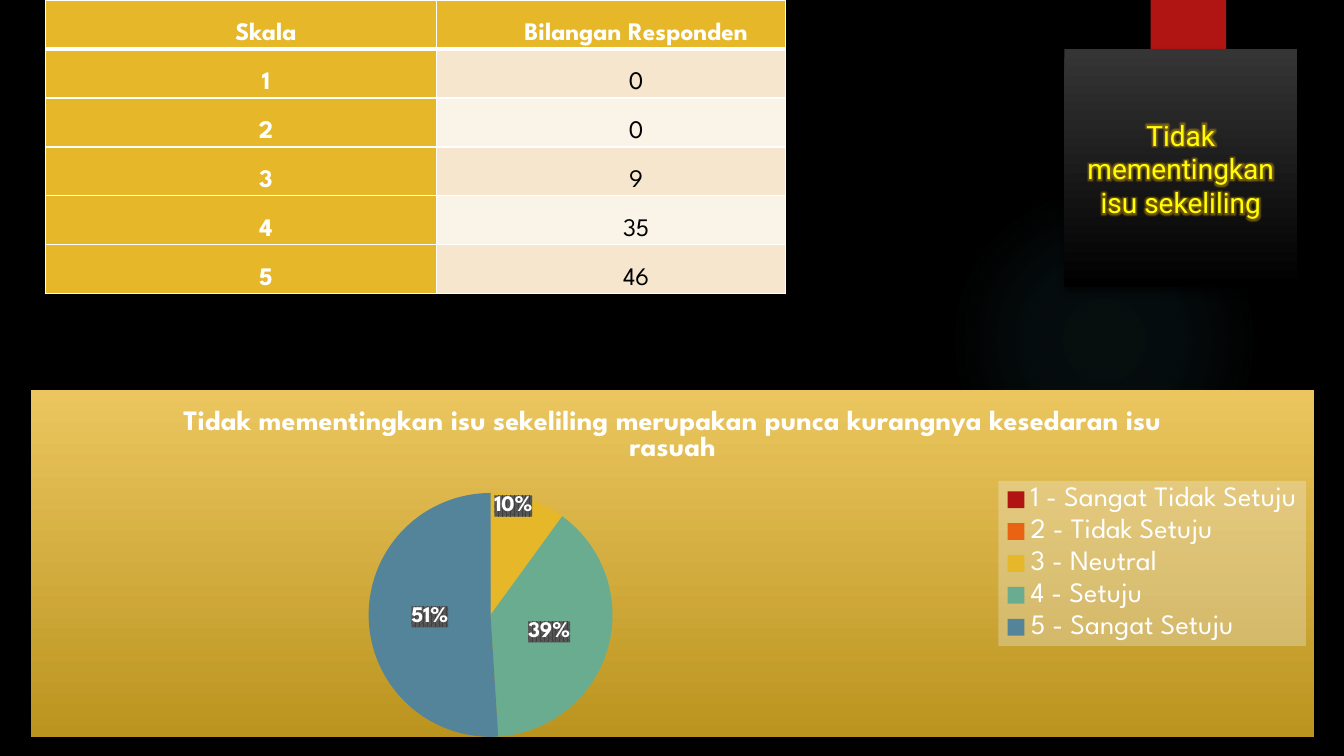
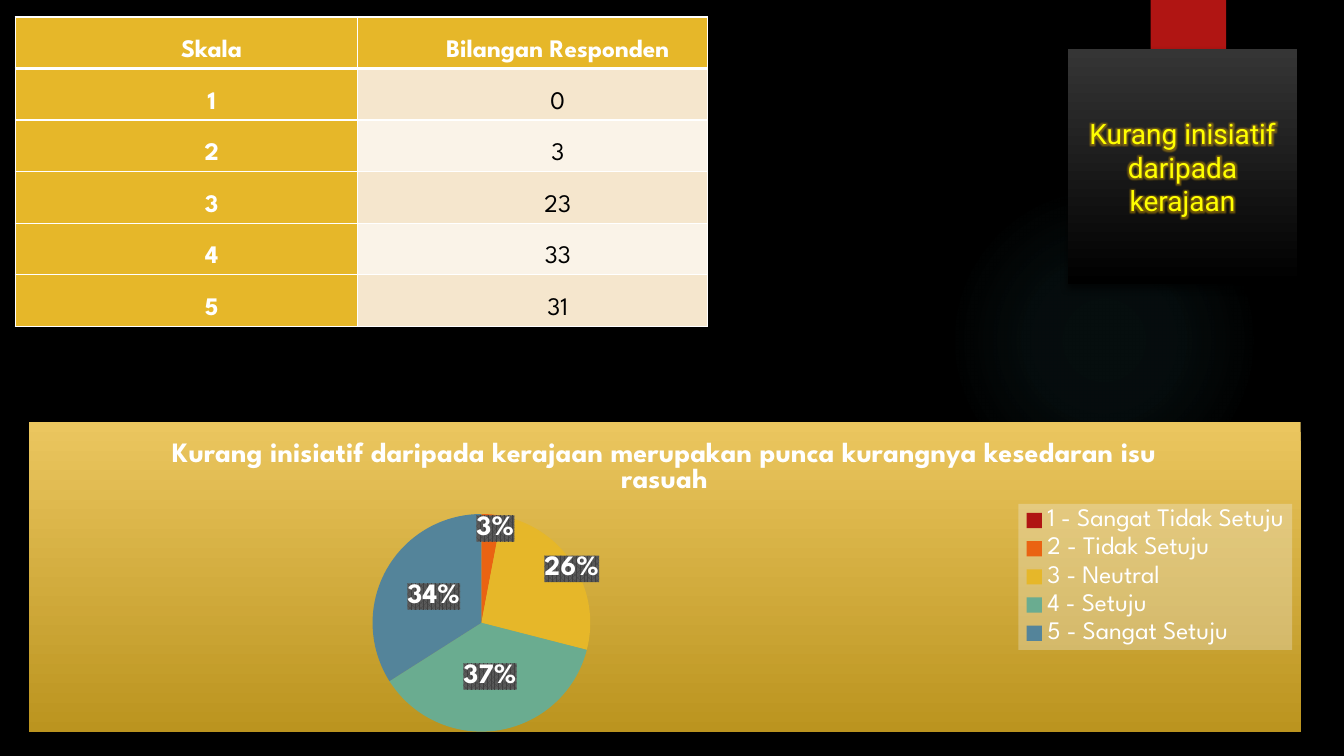
"""Build two survey slides, each with a response table, a pie chart and a heading."""
from copy import deepcopy
from dataclasses import dataclass

from pptx import Presentation
from pptx.chart.data import CategoryChartData
from pptx.dml.color import RGBColor
from pptx.enum.chart import XL_CHART_TYPE, XL_LABEL_POSITION, XL_LEGEND_POSITION
from pptx.enum.shapes import MSO_SHAPE
from pptx.enum.text import MSO_ANCHOR, MSO_AUTO_SIZE, PP_ALIGN
from pptx.oxml import parse_xml
from pptx.oxml.ns import nsdecls, qn
from pptx.util import Pt


@dataclass(frozen=True)
class Theme:
    black: str = "000000"
    white: str = "FFFFFF"
    red: str = "B01513"
    gold: str = "E6B729"
    glow: str = "50B9C1"
    heading: str = "FFFF00"
    heading_glow: str = "FFC000"
    heading_top: str = "353535"
    panel_top: str = "EBC65F"
    panel_bottom: str = "BB941F"
    legend: str = "F2F2F2"
    label_dark: str = "404040"
    label_light: str = "595959"
    bands: tuple = ("F5E6CD", "FAF3E8")
    slices: tuple = ("B01513", "EA6312", "E6B729", "6AAC90", "54849A")
    body_font: str = "League Spartan"
    heading_font: str = "Roboto"
    heading_size: int = 20
    table_size: int = 18
    chart_size: int = 10


theme = Theme()
SCALE = ("1 - Sangat Tidak Setuju", "2 - Tidak Setuju", "3 - Neutral",
         "4 - Setuju", "5 - Sangat Setuju")
DOWN = '<a:lin ang="5400000" scaled="0"/>'
RADIAL = '<a:path path="circle"><a:fillToRect l="50000" t="50000" r="50000" b="50000"/></a:path>'
SHADOW = ('<a:effectLst><a:outerShdw blurRad="{blur}" dist="{dist}" dir="5400000" rotWithShape="0">'
          '<a:srgbClr val="000000"><a:alpha val="{alpha}"/></a:srgbClr></a:outerShdw></a:effectLst>')

surveys = [
    dict(heading="Tidak mementingkan isu sekeliling",
         heading_box=(760.3, 35.3, 166.3, 170),
         table_at=(32.4, 0), columns=(279.2, 249.6), row_height=35,
         respondents=(0, 0, 9, 35, 46),
         chart_box=(22.3, 278.6, 916.5, 247.8), plot_left=0.005,
         shares=(0, 0, 10, 39, 51), label_size=16, legend_size=20,
         moved_labels={2: (0.003, -0.147)}),
    dict(heading="Kurang inisiatif daripada kerajaan",
         heading_box=(762.8, 35.3, 163.8, 167.8),
         table_at=(10.8, 12.2), columns=(244.8, 249.6), row_height=36.8,
         respondents=(0, 3, 23, 33, 31),
         chart_box=(20.4, 301.5, 908.6, 221.2), plot_left=0.003,
         shares=(0, 3, 26, 37, 34), label_size=20, legend_size=18,
         moved_labels={1: (0.007, -0.13), 2: (0.035, -0.08)}),
]


def fragment(markup):
    return parse_xml(f'<root {nsdecls("a", "c")}>{markup}</root>')[0]


def gradient(stops, direction):
    marks = "".join(
        f'<a:gs pos="{position * 1000}"><a:srgbClr val="{colour}">'
        f'<a:alpha val="{opacity * 1000}"/></a:srgbClr></a:gs>'
        for position, colour, opacity in stops)
    return f'<a:gradFill rotWithShape="1"><a:gsLst>{marks}</a:gsLst>{direction}</a:gradFill>'


deck = Presentation()
deck.slide_width, deck.slide_height = Pt(960), Pt(540)
backdrop = deck.slide_master.background.fill
backdrop.solid()
backdrop.fore_color.rgb = RGBColor.from_string(theme.black)
layout = deck.slide_layouts[5]
slides = [deck.slides.add_slide(layout) for survey in surveys]

halo = slides[0].shapes.add_shape(MSO_SHAPE.OVAL, Pt(677.5), Pt(131.8), Pt(221.8), Pt(221.8))
halo.element.spPr.append(fragment(gradient(
    [(0, theme.glow, 7), (36, theme.glow, 6), (69, theme.glow, 0)], RADIAL)))
halo.shadow.inherit = False
ribbon = slides[0].shapes.add_shape(MSO_SHAPE.RECTANGLE, Pt(821.9), 0, Pt(54), Pt(90))
ribbon.fill.solid()
ribbon.fill.fore_color.rgb = RGBColor.from_string(theme.red)
for order, ornament in enumerate((halo, ribbon)):
    ornament.line.fill.background()
    ornament.element.xpath("./p:nvSpPr/p:cNvPr")[0].set("id", str(20 + order))
    layout.shapes.element.insert(2 + order, ornament.element)
ribbon.element.spPr.append(fragment(SHADOW.format(blur=Pt(3), dist=Pt(2), alpha=45000)))

for slide, survey in zip(slides, surveys):
    heading = slide.shapes.title
    heading.left, heading.top, heading.width, heading.height = map(Pt, survey["heading_box"])
    heading.element.spPr.append(fragment(gradient(
        [(0, theme.heading_top, 100), (100, theme.black, 100)], DOWN)))
    heading.element.spPr.append(fragment(SHADOW.format(blur=Pt(5), dist=Pt(3), alpha=60000)))
    heading.text_frame.text = survey["heading"]
    heading.text_frame.word_wrap = True
    heading.text_frame.auto_size = MSO_AUTO_SIZE.NONE
    heading.text_frame.vertical_anchor = MSO_ANCHOR.MIDDLE
    heading_line = heading.text_frame.paragraphs[0]
    heading_line.alignment = PP_ALIGN.CENTER
    heading_font = heading_line.runs[0].font
    heading_font.name = theme.heading_font
    heading_font.size = Pt(theme.heading_size)
    heading_font.color.rgb = RGBColor.from_string(theme.heading)
    heading_line.runs[0].font.fill._xPr.find(qn("a:solidFill")).addnext(fragment(
        f'<a:effectLst><a:glow rad="{Pt(5)}"><a:srgbClr val="{theme.heading_glow}">'
        '<a:alpha val="40000"/></a:srgbClr></a:glow></a:effectLst>'))

    rows = [("Skala", "Bilangan Responden"), *enumerate(survey["respondents"], 1)]
    left, top = survey["table_at"]
    responses = slide.shapes.add_table(
        len(rows), 2, Pt(left), Pt(top), Pt(sum(survey["columns"])),
        Pt(survey["row_height"] * len(rows))).table
    for column, width in zip(responses.columns, survey["columns"]):
        column.width = Pt(width)
    for r, row in enumerate(rows):
        responses.rows[r].height = Pt(survey["row_height"])
        for c, entry in enumerate(row):
            accented = r == 0 or c == 0
            cell = responses.cell(r, c)
            cell.margin_left = cell.margin_right = Pt(5)
            cell.margin_top = cell.margin_bottom = 0
            cell.fill.solid()
            cell.fill.fore_color.rgb = RGBColor.from_string(
                theme.gold if accented else theme.bands[(r - 1) % 2])
            edges = {"lnL": 1, "lnR": 1, "lnT": 3 if r == 1 else 1, "lnB": 3 if r == 0 else 1}
            for position, (edge, weight) in enumerate(edges.items()):
                cell._tc.tcPr.insert(position, fragment(
                    f'<a:{edge} w="{Pt(weight)}"><a:solidFill>'
                    f'<a:srgbClr val="{theme.white}"/></a:solidFill></a:{edge}>'))
            cell.text_frame.text = str(entry)
            line = cell.text_frame.paragraphs[0]
            line.alignment = PP_ALIGN.CENTER
            line.line_spacing = 2.0
            line._p.get_or_add_pPr().set("marL", str(Pt(36)))
            entry_font = line.runs[0].font
            entry_font.name = theme.body_font
            entry_font.size = Pt(theme.table_size)
            entry_font.bold = accented
            entry_font.color.rgb = RGBColor.from_string(theme.white if accented else theme.black)

    shares = CategoryChartData()
    shares.categories = SCALE
    shares.add_series("Series 1", survey["shares"])
    chart = slide.shapes.add_chart(
        XL_CHART_TYPE.PIE, *map(Pt, survey["chart_box"]), shares).chart
    pie = chart.plots[0]
    pie.vary_by_categories = True
    series = pie.series[0]
    for position, colour in enumerate(theme.slices):
        slice_fill = series.points[position].format.fill
        slice_fill.solid()
        slice_fill.fore_color.rgb = RGBColor.from_string(colour)

    chart.has_title = True
    chart.chart_title.include_in_layout = False
    chart.chart_title.text_frame.text = (
        survey["heading"] + " merupakan punca kurangnya kesedaran isu rasuah")
    chart.has_legend = True
    chart.legend.position = XL_LEGEND_POSITION.RIGHT
    chart.legend.include_in_layout = False
    labels = series.data_labels
    labels.show_percentage = True
    labels.show_value = False
    labels.number_format = "0%"
    labels.number_format_is_linked = False
    labels.position = XL_LABEL_POSITION.CENTER
    title_font = chart.chart_title.text_frame.paragraphs[0].runs[0].font
    for font, size, bold in ((chart.font, theme.chart_size, False),
                             (title_font, theme.heading_size, True),
                             (chart.legend.font, survey["legend_size"], False),
                             (labels.font, survey["label_size"], True)):
        font.name = theme.body_font
        font.size = Pt(size)
        font.bold = bold
        font.color.rgb = RGBColor.from_string(theme.white)

    label_set = chart.element.xpath(".//c:ser/c:dLbls")[0]
    panel_fill = gradient([(0, theme.panel_top, 100), (100, theme.panel_bottom, 100)], DOWN)
    legend_fill = (f'<a:solidFill><a:srgbClr val="{theme.legend}">'
                   '<a:alpha val="30000"/></a:srgbClr></a:solidFill>')
    label_fill = (f'<a:pattFill prst="pct75"><a:fgClr><a:srgbClr val="{theme.label_dark}"/></a:fgClr>'
                  f'<a:bgClr><a:srgbClr val="{theme.label_light}"/></a:bgClr></a:pattFill>')
    for owner, fill in ((chart.element, panel_fill),
                        (chart.element.xpath(".//c:legend")[0], legend_fill),
                        (label_set, label_fill)):
        owner.find(qn("c:txPr")).addprevious(
            fragment(f'<c:spPr>{fill}<a:ln><a:noFill/></a:ln></c:spPr>'))

    label_format = [part for part in label_set if part.tag != qn("c:showLeaderLines")]
    special_labels = []
    for position, share in enumerate(survey["shares"]):
        if share == 0:
            special_labels.append(fragment(
                f'<c:dLbl><c:idx val="{position}"/><c:delete val="1"/></c:dLbl>'))
        elif position in survey["moved_labels"]:
            x, y = survey["moved_labels"][position]
            moved = fragment(
                f'<c:dLbl><c:idx val="{position}"/><c:layout><c:manualLayout>'
                f'<c:x val="{x}"/><c:y val="{y}"/></c:manualLayout></c:layout></c:dLbl>')
            moved.extend(deepcopy(part) for part in label_format)
            special_labels.append(moved)
    for position, label in enumerate(special_labels):
        label_set.insert(position, label)

    plot_area = chart.element.xpath(".//c:plotArea")[0]
    for automatic in plot_area.findall(qn("c:layout")):
        plot_area.remove(automatic)
    plot_area.insert(0, fragment(
        '<c:layout><c:manualLayout><c:layoutTarget val="inner"/>'
        '<c:xMode val="edge"/><c:yMode val="edge"/>'
        f'<c:x val="{survey["plot_left"]}"/><c:y val="0.297"/>'
        '<c:w val="0.706"/><c:h val="0.703"/></c:manualLayout></c:layout>'))

deck.save("out.pptx")
